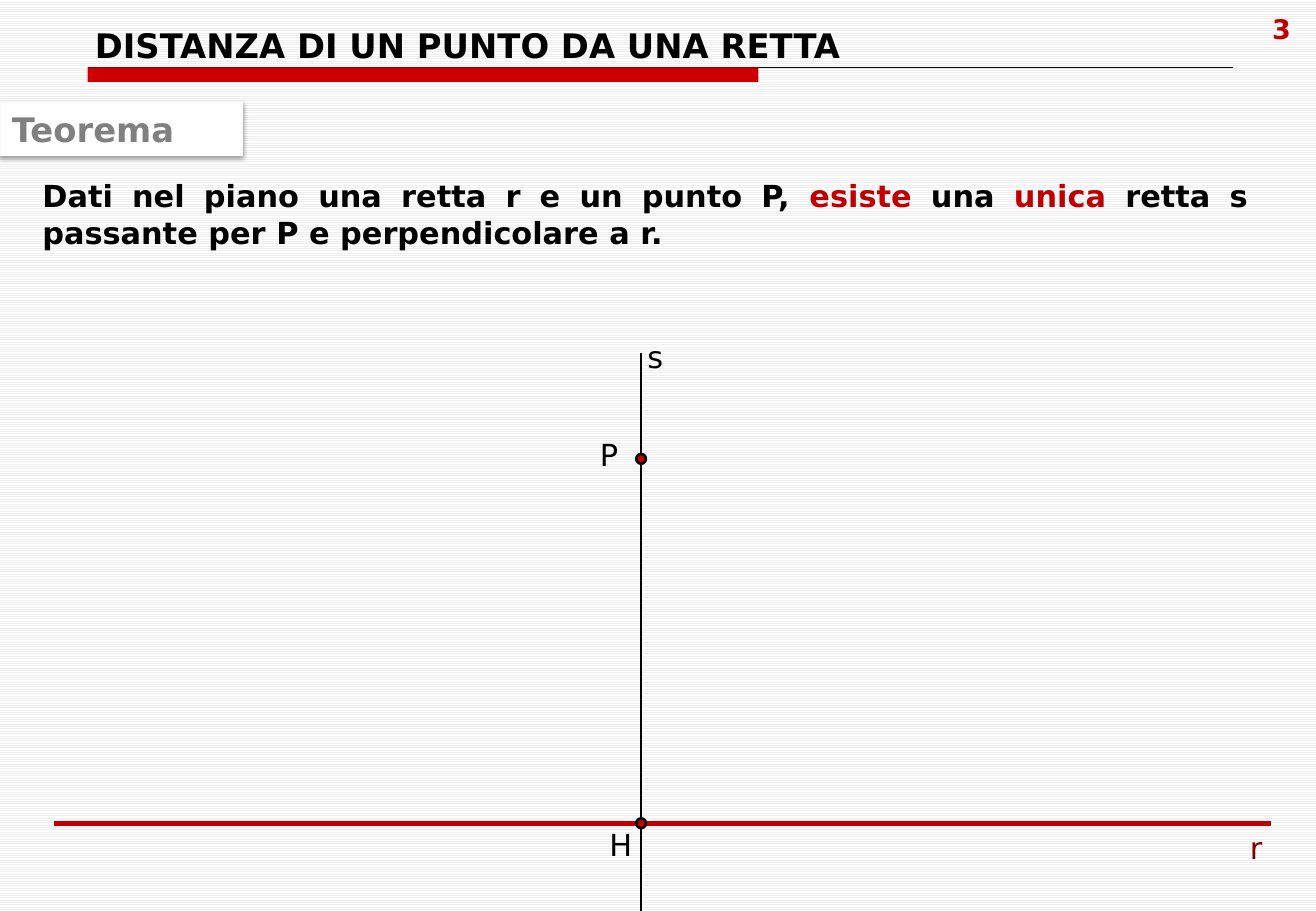
import lxml.etree
import pptx
import pptx.dml.color
import pptx.enum.dml
import pptx.enum.shapes
import pptx.enum.text
import pptx.oxml
import pptx.oxml.ns
import pptx.util

Pt = pptx.util.Pt
RGB = pptx.dml.color.RGBColor
ALIGN = pptx.enum.text.PP_ALIGN
ANCHOR = pptx.enum.text.MSO_ANCHOR
SHAPE = pptx.enum.shapes.MSO_SHAPE

FONT = "DejaVu Sans"
BLACK = RGB(0x00, 0x00, 0x00)
WHITE = RGB(0xFF, 0xFF, 0xFF)
STRIPE = RGB(0xEE, 0xEE, 0xEE)
EDGE = RGB(0xF9, 0xF9, 0xF9)
GREY = RGB(0x80, 0x80, 0x80)
RED = RGB(0xC0, 0x00, 0x00)
BAR_RED = RGB(0xCC, 0x00, 0x00)
DARK_RED = RGB(0x80, 0x00, 0x00)

SLIDE_WIDTH, SLIDE_HEIGHT = 780, 540
AXIS_X = 380
P_Y, H_Y = 272, 488
DOT_SIZE = 5.8

SHADOW_XML = (
    '<a:effectLst xmlns:a="http://schemas.openxmlformats.org/drawingml/2006/main">'
    '<a:outerShdw blurRad="39370" dist="20320" dir="5400000" rotWithShape="0">'
    '<a:srgbClr val="000000"><a:alpha val="38000"/></a:srgbClr>'
    "</a:outerShdw></a:effectLst>"
)


def write(frame, runs, size, bold=False, align=ALIGN.LEFT, anchor=ANCHOR.TOP, wrap=True):
    """Fill a text frame with (text, colour) runs."""
    frame.word_wrap = wrap
    frame.auto_size = pptx.enum.text.MSO_AUTO_SIZE.NONE
    frame.vertical_anchor = anchor
    paragraph = frame.paragraphs[0]
    paragraph.alignment = align
    for text, color in runs:
        run = paragraph.add_run()
        run.text = text
        run.font.name = FONT
        run.font.size = Pt(size)
        run.font.bold = bold
        run.font.color.rgb = color


def add_text(slide, left, top, width, height, runs, size, **style):
    box = slide.shapes.add_textbox(Pt(left), Pt(top), Pt(width), Pt(height))
    write(box.text_frame, runs, size, **style)


def add_filled(slide, kind, left, top, width, height, fill, line=None, weight=0.75):
    shape = slide.shapes.add_shape(kind, Pt(left), Pt(top), Pt(width), Pt(height))
    shape.shadow.inherit = False
    shape.fill.solid()
    shape.fill.fore_color.rgb = fill
    if line is None:
        shape.line.fill.background()
    else:
        shape.line.color.rgb = line
        shape.line.width = Pt(weight)
    return shape


def add_line(slide, x1, y1, x2, y2, color, weight):
    line = slide.shapes.add_connector(
        pptx.enum.shapes.MSO_CONNECTOR.STRAIGHT, Pt(x1), Pt(y1), Pt(x2), Pt(y2))
    line.line.color.rgb = color
    line.line.width = Pt(weight)
    lxml.etree.SubElement(line._element.spPr, pptx.oxml.ns.qn("a:effectLst"))


def add_point(slide, y):
    add_filled(slide, SHAPE.OVAL, AXIS_X - DOT_SIZE / 2, y - DOT_SIZE / 2,
               DOT_SIZE, DOT_SIZE, RED, BLACK, 1.5)


def add_title(slide, text):
    title = slide.shapes.title
    title.left, title.top, title.width, title.height = Pt(49), Pt(10.8), Pt(682.5), Pt(27.4)
    write(title.text_frame, [(text, BLACK)], 20, bold=True)


def add_theorem_tag(slide):
    tag = add_filled(slide, SHAPE.RECTANGLE, 0, 60.5, 144, 31.7, WHITE, EDGE)
    properties = tag._element.spPr
    properties.remove(properties.find(pptx.oxml.ns.qn("a:effectLst")))
    properties.append(pptx.oxml.parse_xml(SHADOW_XML))
    write(tag.text_frame, [("Teorema", GREY)], 20, bold=True, anchor=ANCHOR.MIDDLE)


def main():
    deck = pptx.Presentation()
    deck.slide_width, deck.slide_height = Pt(SLIDE_WIDTH), Pt(SLIDE_HEIGHT)
    slide = deck.slides.add_slide(deck.slide_layouts[5])

    # Striped background
    background = slide.background.fill
    background.patterned()
    background.pattern = pptx.enum.dml.MSO_PATTERN.LIGHT_HORIZONTAL
    background.fore_color.rgb = STRIPE
    background.back_color.rgb = WHITE

    # Header: title, rule, bar and page number
    add_title(slide, "DISTANZA DI UN PUNTO DA UNA RETTA")
    add_line(slide, 52, 40.2, 731, 40.2, BLACK, 0.5)
    add_filled(slide, SHAPE.RECTANGLE, 52, 40, 397.5, 8.6, BAR_RED)
    add_text(slide, 739.6, 3.6, 40, 37.4, [("3", RED)], 16, bold=True, align=ALIGN.CENTER)

    # Theorem
    add_theorem_tag(slide)
    statement = [
        ("Dati nel piano una retta r e un punto P, ", BLACK),
        ("esiste", RED),
        (" una ", BLACK),
        ("unica", RED),
        (" retta s passante per P e perpendicolare a r.", BLACK),
    ]
    add_text(slide, 18, 101.5, 728.6, 51, statement, 18, bold=True, align=ALIGN.JUSTIFY)

    # Lines r and s with their points
    add_line(slide, 32, H_Y, 753.2, H_Y, RED, 3)
    add_line(slide, AXIS_X, 209.4, AXIS_X, SLIDE_HEIGHT, BLACK, 1.5)
    for y in (P_Y, H_Y):
        add_point(slide, y)

    # Labels
    for label, left, top, width, color in (
        ("P", 348.5, 255, 25.2, BLACK),
        ("s", 376.6, 196.6, 23.8, BLACK),
        ("H", 354.2, 486, 28, BLACK),
        ("r", 733.7, 488.2, 22.3, DARK_RED),
    ):
        add_text(slide, left, top, width, 29, [(label, color)], 18, wrap=False)

    deck.save("out.pptx")


if __name__ == "__main__":
    main()
